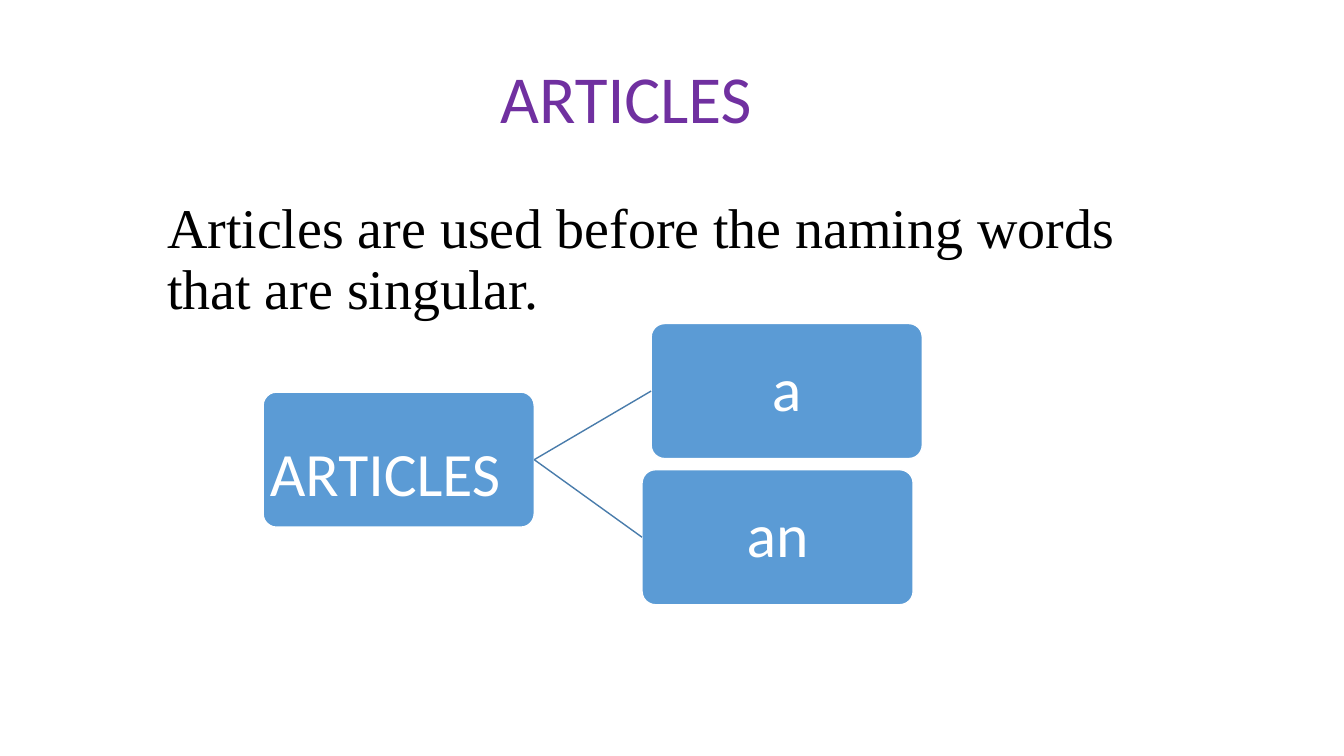
from lxml import etree
from pptx import Presentation
from pptx.dml.color import RGBColor
from pptx.enum.shapes import MSO_CONNECTOR, MSO_SHAPE
from pptx.enum.text import MSO_ANCHOR, PP_ALIGN
from pptx.oxml.ns import qn
from pptx.util import Pt

ROUNDED = MSO_SHAPE.ROUNDED_RECTANGLE
STRAIGHT = MSO_CONNECTOR.STRAIGHT
TOP, MIDDLE, BOTTOM = MSO_ANCHOR.TOP, MSO_ANCHOR.MIDDLE, MSO_ANCHOR.BOTTOM
LEFT, CENTER = PP_ALIGN.LEFT, PP_ALIGN.CENTER

PURPLE = RGBColor(0x70, 0x30, 0xA0)
BLACK = RGBColor(0, 0, 0)
WHITE = RGBColor(0xFF, 0xFF, 0xFF)
NODE_BLUE = RGBColor(0x5B, 0x9B, 0xD5)
BRANCH_BLUE = RGBColor(0x49, 0x7C, 0xAB)

HEADING_FONT, BODY_FONT = "Calibri", "Times New Roman"
NODE_WIDTH, NODE_HEIGHT = 193.7, 96.5


def write(frame, text, font, size, color, anchor, align=LEFT):
    frame.word_wrap = True
    frame.vertical_anchor = anchor
    paragraph = frame.paragraphs[0]
    paragraph.alignment = align
    paragraph.line_spacing = 0.9
    run = paragraph.add_run()
    run.text = text
    run.font.name = font
    run.font.size = Pt(size)
    run.font.color.rgb = color
    return paragraph


def add_title(slide, left, top, width, height):
    title = slide.shapes.add_textbox(Pt(left), Pt(top), Pt(width), Pt(height))
    write(title.text_frame, "ARTICLES", HEADING_FONT, 48, PURPLE, BOTTOM)
    title.text_frame.margin_left = Pt(245)


def add_definition(slide, left, top, width, height):
    definition = slide.shapes.add_textbox(Pt(left), Pt(top), Pt(width), Pt(height))
    sentence = "Articles are used before the naming words that are singular."
    paragraph = write(definition.text_frame, sentence, BODY_FONT, 40, BLACK, TOP)
    paragraph.space_before = Pt(10)


def add_node(slide, left, top, text, align=CENTER, drop=0):
    """Adds a rounded node; drop lowers its text below the middle."""
    node = slide.shapes.add_shape(ROUNDED, Pt(left), Pt(top), Pt(NODE_WIDTH), Pt(NODE_HEIGHT))
    node.adjustments[0] = 0.1
    node.shadow.inherit = False
    node.fill.solid()
    node.fill.fore_color.rgb = NODE_BLUE
    node.line.color.rgb = WHITE
    node.line.width = Pt(1)
    frame = node.text_frame
    frame.margin_left = frame.margin_right = frame.margin_bottom = Pt(2)
    frame.margin_top = Pt(2 + 2 * drop)
    write(frame, text, HEADING_FONT, 44, WHITE, MIDDLE, align)
    return node


def add_branch(slide, parent, child):
    branch = slide.shapes.add_connector(STRAIGHT, 0, 0, 0, 0)
    branch.begin_connect(parent, 3)
    branch.end_connect(child, 1)
    # Connection sites 3 and 1 are the right and left middles
    branch.begin_x, branch.begin_y = parent.left + parent.width, parent.top + parent.height // 2
    branch.end_x, branch.end_y = child.left, child.top + child.height // 2
    branch.line.color.rgb = BRANCH_BLUE
    branch.line.width = Pt(1)
    etree.SubElement(branch.line._get_or_add_ln().getparent(), qn("a:effectLst"))


def add_tree(slide, left, top):
    root = add_node(slide, left, top + 49, "ARTICLES", LEFT, drop=12)
    for word, dx, dy in (("a", 277.2, 0), ("an", 270.7, 104.4)):
        add_branch(slide, root, add_node(slide, left + dx, top + dy, word))


def main():
    deck = Presentation()
    deck.slide_width, deck.slide_height = Pt(960), Pt(540)
    slide = deck.slides.add_slide(deck.slide_layouts[6])
    add_title(slide, 112.3, 41, 720, 61.2)
    add_definition(slide, 112.3, 139.7, 720, 197.3)
    add_tree(slide, 187.9, 231.1)
    deck.save("out.pptx")


if __name__ == "__main__":
    main()
